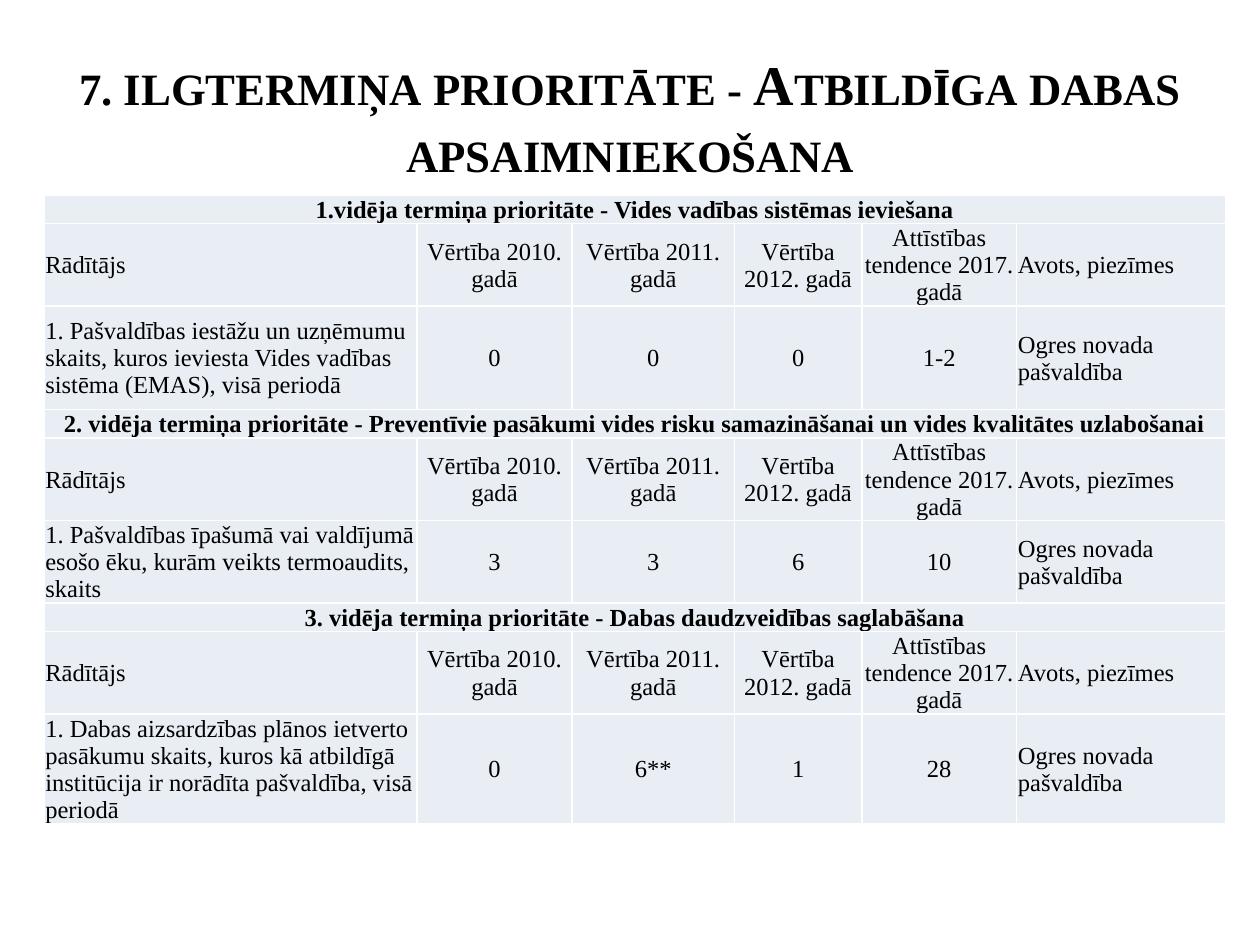
from lxml import etree
from pptx import Presentation
from pptx.dml.color import RGBColor
from pptx.enum.text import MSO_ANCHOR, PP_ALIGN
from pptx.oxml.ns import qn
from pptx.util import Inches, Pt

LEFT, CENTER = PP_ALIGN.LEFT, PP_ALIGN.CENTER
MIDDLE = MSO_ANCHOR.MIDDLE

FONT = "Times New Roman"
COLORS = {"text": "000000", "cell": "E9EDF4", "border": "FFFFFF"}

# Content
TITLE = "7. ilgtermiņa prioritāte - Atbildīga dabas apsaimniekošana"
HEADINGS = ["Rādītājs", "Vērtība 2010. gadā", "Vērtība 2011. gadā",
            "Vērtība 2012. gadā", "Attīstības tendence 2017. gadā",
            "Avots, piezīmes"]
SOURCE = "Ogres novada pašvaldība"
# (medium-term priority, indicator, values, indicator row height)
PRIORITIES = [
    ("1.vidēja termiņa prioritāte - Vides vadības sistēmas ieviešana",
     "1. Pašvaldības iestāžu un uzņēmumu skaits, kuros ieviesta "
     "Vides vadības sistēma (EMAS), visā periodā",
     ["0", "0", "0", "1-2"], 0.82),
    ("2. vidēja termiņa prioritāte - Preventīvie pasākumi vides risku "
     "samazināšanai un vides kvalitātes uzlabošanai",
     "1. Pašvaldības īpašumā vai valdījumā esošo ēku, kurām veikts "
     "termoaudits, skaits",
     ["3", "3", "6", "10"], 0.62),
    ("3. vidēja termiņa prioritāte - Dabas daudzveidības saglabāšana",
     "1. Dabas aizsardzības plānos ietverto pasākumu skaits, kuros kā "
     "atbildīgā institūcija ir norādīta pašvaldība, visā periodā",
     ["0", "6**", "1", "28"], 0.82),
]
COLUMN_WIDTHS = [2.96, 1.23, 1.29, 1.01, 1.23, 1.66]
BANNER_HEIGHT, HEADING_HEIGHT = 0.21, 0.62


def add_run(paragraph, text, size, bold, align):
    paragraph.alignment = align
    run = paragraph.add_run()
    run.text = text
    run.font.name = FONT
    run.font.size = Pt(size)
    run.font.bold = bold
    run.font.color.rgb = RGBColor.from_string(COLORS["text"])
    return run


def format_cell(cell):
    cell.margin_left = cell.margin_right = cell.margin_top = Inches(0.01)
    cell.margin_bottom = 0
    cell.vertical_anchor = MIDDLE
    properties = cell._tc.get_or_add_tcPr()
    for side in ("lnL", "lnR", "lnT", "lnB"):
        line = etree.SubElement(properties, qn(f"a:{side}"), w=str(Pt(1)))
        fill = etree.SubElement(line, qn("a:solidFill"))
        etree.SubElement(fill, qn("a:srgbClr"), val=COLORS["border"])
    cell.fill.solid()
    cell.fill.fore_color.rgb = RGBColor.from_string(COLORS["cell"])


def fill_row(table, row, texts):
    last = len(texts) - 1
    for column, text in enumerate(texts):
        align = LEFT if column in (0, last) else CENTER
        paragraph = table.cell(row, column).text_frame.paragraphs[0]
        add_run(paragraph, text, 14, False, align)


prs = Presentation()
prs.slide_width, prs.slide_height = Inches(10), Inches(7.5)
slide = prs.slides.add_slide(prs.slide_layouts[5])

# Title
title = slide.shapes.title
title.left, title.top = Inches(0.5), Inches(0.3)
title.width, title.height = Inches(9), Inches(1.25)
title.text_frame.vertical_anchor = MIDDLE
title_run = add_run(title.text_frame.paragraphs[0], TITLE, 32, True, CENTER)
title_run.font._element.set("cap", "small")

# Table grid
frame = slide.shapes.add_table(3 * len(PRIORITIES), len(HEADINGS), Inches(0.35),
                               Inches(1.55), Inches(9.37), Inches(5.34))
table = frame.table
table.first_row = table.horz_banding = False
for column, width in zip(table.columns, COLUMN_WIDTHS):
    column.width = Inches(width)
for cell in table.iter_cells():
    format_cell(cell)

# Three rows per priority: banner, headings, indicator
for index, (priority, indicator, values, height) in enumerate(PRIORITIES):
    top = 3 * index
    for offset, row_height in enumerate((BANNER_HEIGHT, HEADING_HEIGHT, height)):
        table.rows[top + offset].height = Inches(row_height)
    banner = table.cell(top, 0)
    banner.merge(table.cell(top, len(HEADINGS) - 1))
    add_run(banner.text_frame.paragraphs[0], priority, 14, True, CENTER)
    fill_row(table, top + 1, HEADINGS)
    fill_row(table, top + 2, [indicator, *values, SOURCE])
frame.height = Inches(5.34)

prs.save("out.pptx")
